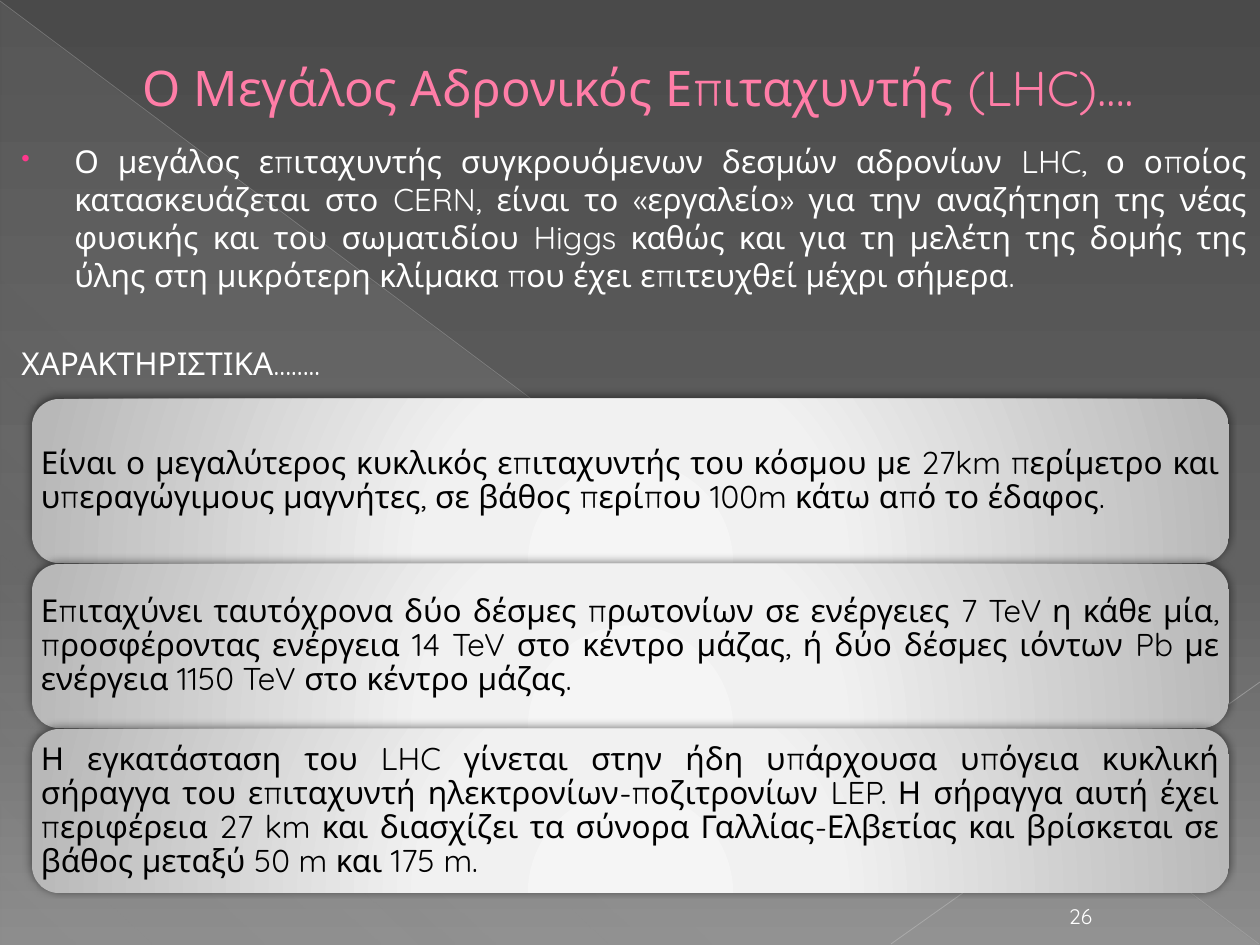
from lxml import etree
from pptx import Presentation
from pptx.dml.color import RGBColor
from pptx.enum.shapes import MSO_CONNECTOR, MSO_SHAPE
from pptx.enum.text import MSO_ANCHOR, PP_ALIGN
from pptx.oxml import parse_xml
from pptx.oxml.ns import nsdecls, qn
from pptx.util import Pt

PX = 914400 / 126
WIDTH, HEIGHT = 1260, 945
FONT = "Quicksand"
PINK = RGBColor(0xFF, 0x7D, 0xA7)
WHITE = RGBColor(0xFF, 0xFF, 0xFF)
BLACK = RGBColor(0, 0, 0)
LEFT, CENTER, JUSTIFY = PP_ALIGN.LEFT, PP_ALIGN.CENTER, PP_ALIGN.JUSTIFY
TOP, MIDDLE, BOTTOM = MSO_ANCHOR.TOP, MSO_ANCHOR.MIDDLE, MSO_ANCHOR.BOTTOM
ROUNDED, TRIANGLE = MSO_SHAPE.ROUNDED_RECTANGLE, MSO_SHAPE.RIGHT_TRIANGLE
STRAIGHT = MSO_CONNECTOR.STRAIGHT


def set_gradient(parent, stops, direction):
    """Swap the solid fill in parent for a gradient of (position, colour, alpha) stops."""
    stop_xml = "".join(
        f'<a:gs pos="{position * 1000}"><a:srgbClr val="{colour}">'
        f'<a:alpha val="{alpha * 1000}"/></a:srgbClr></a:gs>'
        for position, colour, alpha in stops)
    gradient = parse_xml(f'<a:gradFill {nsdecls("a")} rotWithShape="1">'
                         f'<a:gsLst>{stop_xml}</a:gsLst>{direction}</a:gradFill>')
    parent.replace(parent.find(qn("a:solidFill")), gradient)


def write_text(shape, text, size=18, color=WHITE, align=JUSTIFY, anchor=TOP,
               inset=None, line_spacing=None, before=0, after=0, new=False):
    """Write one paragraph into a shape and return it."""
    frame = shape.text_frame
    frame.word_wrap = True
    frame.vertical_anchor = anchor
    if inset is not None:
        frame.margin_left = frame.margin_right = round(inset * PX)
        frame.margin_top = frame.margin_bottom = round(inset * PX)
    para = frame.add_paragraph() if new else frame.paragraphs[0]
    para.alignment = align
    para.line_spacing = line_spacing
    para.space_before, para.space_after = Pt(before), Pt(after)
    span = para.add_run()
    span.text = text
    span.font.name, span.font.size = FONT, Pt(size)
    span.font.color.rgb = color
    return para


deck = Presentation()
deck.slide_width, deck.slide_height = round(WIDTH * PX), round(HEIGHT * PX)
page = deck.slides.add_slide(deck.slide_layouts[6])
shapes = page.shapes

# Background
page.background.fill.solid()
set_gradient(page.background._cSld.bg.bgPr,
             [(0, "4A4A4A", 100), (60, "626262", 100), (100, "8C8C8C", 100)],
             '<a:lin ang="5400000" scaled="0"/>')

# Pale triangle and diagonal lines
triangle = shapes.add_shape(TRIANGLE, *[round(v * PX) for v in (1, 2, 1258, 943)])
triangle.shadow.inherit = False
triangle.line.fill.background()
triangle.fill.solid()
set_gradient(triangle._element.spPr,
             [(0, "D2D2D2", 10), (70, "D2D2D2", 8), (100, "D2D2D2", 1)],
             '<a:lin ang="7980000" scaled="0"/>')

for ends, color, width, alpha in [
        ((0, 1, 1259, 944), RGBColor(0xBF, 0xBF, 0xBF), 0.39, 35),
        ((1260, 682, 891, 944), RGBColor(0xC6, 0xC6, 0xC6), 0.47, 45)]:
    diagonal = shapes.add_connector(STRAIGHT, *[round(v * PX) for v in ends])
    diagonal.line.color.rgb = color
    diagonal.line.width = Pt(width)
    properties = diagonal._element.spPr
    color_element = properties.find(".//" + qn("a:srgbClr"))
    etree.SubElement(color_element, qn("a:alpha"), val=str(alpha * 1000))
    etree.SubElement(properties, qn("a:effectLst"))

# Title
title = shapes.add_textbox(*[round(v * PX) for v in (63, 37, 1134, 100)])
para = write_text(title, "Ο Μεγάλος Αδρονικός Επιταχυντής (LHC)….",
                  size=28, color=PINK, align=LEFT, anchor=MIDDLE)
para._p.get_or_add_pPr().set("marL", str(round(67 * PX)))

# Introduction with bullet, then the heading of the cards
body = shapes.add_textbox(*[round(v * PX) for v in (0, 136, 1260, 260)])
para = write_text(
    body,
    "Ο μεγάλος επιταχυντής συγκρουόμενων δεσμών αδρονίων LHC, ο οποίος "
    "κατασκευάζεται στο CERN, είναι το «εργαλείο» για την αναζήτηση της νέας "
    "φυσικής και του σωματιδίου Higgs καθώς και για τη μελέτη της δομής της "
    "ύλης στη μικρότερη κλίμακα που έχει επιτευχθεί μέχρι σήμερα.",
    before=3.6)
properties = para._p.get_or_add_pPr()
properties.set("marL", str(round(62 * PX)))
properties.set("indent", str(round(-53 * PX)))
bullet_color = etree.SubElement(properties, qn("a:buClr"))
etree.SubElement(bullet_color, qn("a:srgbClr"), val="FF388C")
etree.SubElement(properties, qn("a:buSzPct"), val="80000")
etree.SubElement(properties, qn("a:buChar"), char="•")
para = write_text(body, "ΧΑΡΑΚΤΗΡΙΣΤΙΚΑ……..", before=28.7, new=True)
para._p.get_or_add_pPr().set("marL", str(round(9 * PX)))

# Page number
number = shapes.add_textbox(*[round(v * PX) for v in (1046, 893, 69, 42)])
write_text(number, "26", size=12, align=CENTER, anchor=BOTTOM)

# Cards
CARD_TOP, CARD_HEIGHT, CARD_STEP = 399, 164, 165
cards = [
    "Είναι ο μεγαλύτερος κυκλικός επιταχυντής του κόσμου με 27km περίμετρο και "
    "υπεραγώγιμους μαγνήτες, σε βάθος περίπου 100m κάτω από το έδαφος.",
    "Επιταχύνει ταυτόχρονα δύο δέσμες πρωτονίων σε ενέργειες 7 TeV η κάθε μία, "
    "προσφέροντας ενέργεια 14 TeV στο κέντρο μάζας, ή δύο δέσμες ιόντων Pb με "
    "ενέργεια 1150 TeV στο κέντρο μάζας.",
    "Η εγκατάσταση του LHC γίνεται στην ήδη υπάρχουσα υπόγεια κυκλική σήραγγα "
    "του επιταχυντή ηλεκτρονίων-ποζιτρονίων LEP. Η σήραγγα αυτή έχει περιφέρεια "
    "27 km και διασχίζει τα σύνορα Γαλλίας-Ελβετίας και βρίσκεται σε βάθος "
    "μεταξύ 50 m και 175 m.",
]
for row, text in enumerate(cards):
    place = (32, CARD_TOP + row * CARD_STEP, 1197, CARD_HEIGHT)
    card = shapes.add_shape(ROUNDED, *[round(v * PX) for v in place])
    card.line.fill.background()
    card.fill.solid()
    set_gradient(card._element.spPr,
                 [(0, "F5F5F5", 100), (34, "F1F1F1", 100), (100, "B8B8B8", 100)],
                 '<a:path path="circle"><a:fillToRect l="50000" t="155000" '
                 'r="50000" b="-55000"/></a:path>')
    card.shadow.inherit = False
    effects = card._element.spPr.find(qn("a:effectLst"))
    shadow = etree.SubElement(effects, qn("a:outerShdw"), blurRad=str(Pt(5)),
                              dist=str(Pt(2)), dir="14700000", rotWithShape="0")
    shadow_color = etree.SubElement(shadow, qn("a:srgbClr"), val="000000")
    etree.SubElement(shadow_color, qn("a:alpha"), val="50000")
    write_text(card, text, color=BLACK, anchor=MIDDLE, inset=1,
               line_spacing=0.9, after=6.3)

deck.save("out.pptx")
